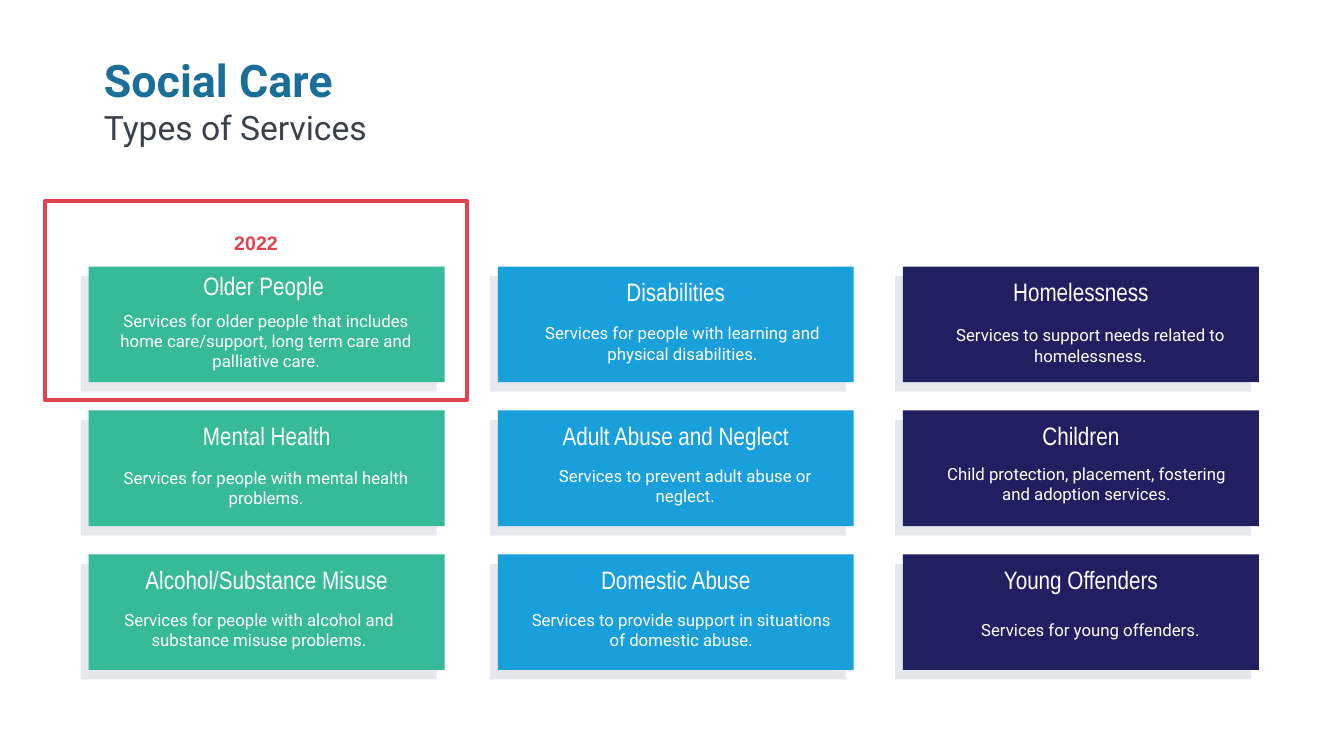
from dataclasses import dataclass

from pptx import Presentation
from pptx.dml.color import RGBColor
from pptx.enum import shapes, text
from pptx.util import Pt


@dataclass(frozen=True)
class Theme:
    heading: str = "1A6F99"
    subheading: str = "3B414A"
    white: str = "FFFFFF"
    backing: str = "E7E8EF"
    highlight: str = "DE4350"
    columns: tuple = ("37BA9A", "199FD9", "202060")
    heading_size: int = 32
    subheading_size: int = 24
    service_size: int = 18
    year_size: int = 14
    detail_size: int = 12
    body_font: str = "Roboto"
    service_font: str = "Arial Narrow"
    year_font: str = "Arial"


THEME = Theme()
COLUMN_LEFTS = (63.4, 355.6, 645)
FIRST_TOP = 190.4
ROW_STEP = 102.8
CARD_WIDTH, CARD_HEIGHT = 254.2, 82.6
BACKING_SHIFT = (-5.6, 6.8)
INSET = 9.4

SERVICES = (
    (
        ("Older People",
         "Services for older people that includes home care/support, "
         "long term care and palliative care.", (-2.2, -4.4), (8.6, 29.4)),
        ("Mental Health",
         "Services for people with mental health problems.", (0, 0), (8.6, 31.6)),
        ("Alcohol/Substance Misuse",
         "Services for people with alcohol and substance misuse problems.",
         (0, 0), (3.6, 30.2)),
    ),
    (
        ("Disabilities",
         "Services for people with learning and physical disabilities.",
         (0, 0), (13.8, 31.4)),
        ("Adult Abuse and Neglect",
         "Services to prevent adult abuse or neglect.", (0, 0), (15.8, 30.2)),
        ("Domestic Abuse",
         "Services to provide support in situations of domestic abuse.",
         (0, 0), (13, 30.2)),
    ),
    (
        ("Homelessness",
         "Services to support needs related to homelessness.", (0, 0), (15.8, 32.8)),
        ("Children",
         "Child protection, placement, fostering and adoption services.",
         (0, 0), (13, 28.8)),
        ("Young Offenders", "Services for young offenders.", (0, 0), (15.8, 30.2)),
    ),
)


def add_run(paragraph, words, font_name, size, color, bold=False):
    run = paragraph.add_run()
    run.text = words
    run.font.name = font_name
    run.font.size = Pt(size)
    run.font.bold = bold
    run.font.color.rgb = RGBColor.from_string(color)


def set_frame(frame, anchor, horizontal, top, bottom):
    frame.word_wrap = True
    frame.auto_size = text.MSO_AUTO_SIZE.NONE
    frame.vertical_anchor = anchor
    frame.margin_left = frame.margin_right = Pt(horizontal)
    frame.margin_top, frame.margin_bottom = Pt(top), Pt(bottom)


def add_rectangle(slide, left, top, width, height):
    shape = slide.shapes.add_shape(
        shapes.MSO_SHAPE.RECTANGLE, Pt(left), Pt(top), Pt(width), Pt(height))
    shape.shadow.inherit = False
    return shape


def add_panel(slide, left, top, color):
    shape = add_rectangle(slide, left, top, CARD_WIDTH, CARD_HEIGHT)
    shape.fill.solid()
    shape.fill.fore_color.rgb = RGBColor.from_string(color)
    shape.line.fill.background()


def add_label(slide, left, top, width, height, words, font_name, size):
    frame = slide.shapes.add_textbox(
        Pt(left), Pt(top), Pt(width), Pt(height)).text_frame
    set_frame(frame, text.MSO_ANCHOR.MIDDLE, INSET, INSET, INSET)
    paragraph = frame.paragraphs[0]
    paragraph.alignment = text.PP_ALIGN.CENTER
    add_run(paragraph, words, font_name, size, THEME.white)


def add_card(slide, left, top, color, service):
    name, detail, name_shift, detail_shift = service
    add_panel(slide, left + BACKING_SHIFT[0], top + BACKING_SHIFT[1], THEME.backing)
    add_panel(slide, left, top, color)
    add_label(slide, left + name_shift[0], top + name_shift[1], CARD_WIDTH, 36,
              name, THEME.service_font, THEME.service_size)
    add_label(slide, left + detail_shift[0], top + detail_shift[1], 236.2, 46.8,
              detail, THEME.body_font, THEME.detail_size)


def fill_title(slide):
    title = slide.shapes.title
    title.left, title.top, title.width, title.height = Pt(67), Pt(34), Pt(622), Pt(85)
    frame = title.text_frame
    set_frame(frame, text.MSO_ANCHOR.TOP, 7.2, 3.6, 3.6)
    heading, subheading = frame.paragraphs[0], frame.add_paragraph()
    heading.alignment = subheading.alignment = text.PP_ALIGN.LEFT
    add_run(heading, "Social Care", THEME.body_font, THEME.heading_size,
            THEME.heading, True)
    add_run(subheading, "Types of Services", THEME.body_font,
            THEME.subheading_size, THEME.subheading)


def add_year_frame(slide):
    shape = add_rectangle(slide, 32.4, 143.4, 301, 142.6)
    shape.fill.background()
    shape.line.color.rgb = RGBColor.from_string(THEME.highlight)
    shape.line.width = Pt(3)
    set_frame(shape.text_frame, text.MSO_ANCHOR.TOP, 7.2, 21.6, 3.6)
    paragraph = shape.text_frame.paragraphs[0]
    paragraph.alignment = text.PP_ALIGN.CENTER
    add_run(paragraph, "2022", THEME.year_font, THEME.year_size,
            THEME.highlight, True)


def main():
    presentation = Presentation()
    presentation.slide_width, presentation.slide_height = Pt(960), Pt(540)
    slide = presentation.slides.add_slide(presentation.slide_layouts[5])
    fill_title(slide)
    for left, color, services in zip(COLUMN_LEFTS, THEME.columns, SERVICES):
        for row, service in enumerate(services):
            add_card(slide, left, FIRST_TOP + row * ROW_STEP, color, service)
    add_year_frame(slide)
    presentation.save("out.pptx")


if __name__ == "__main__":
    main()
